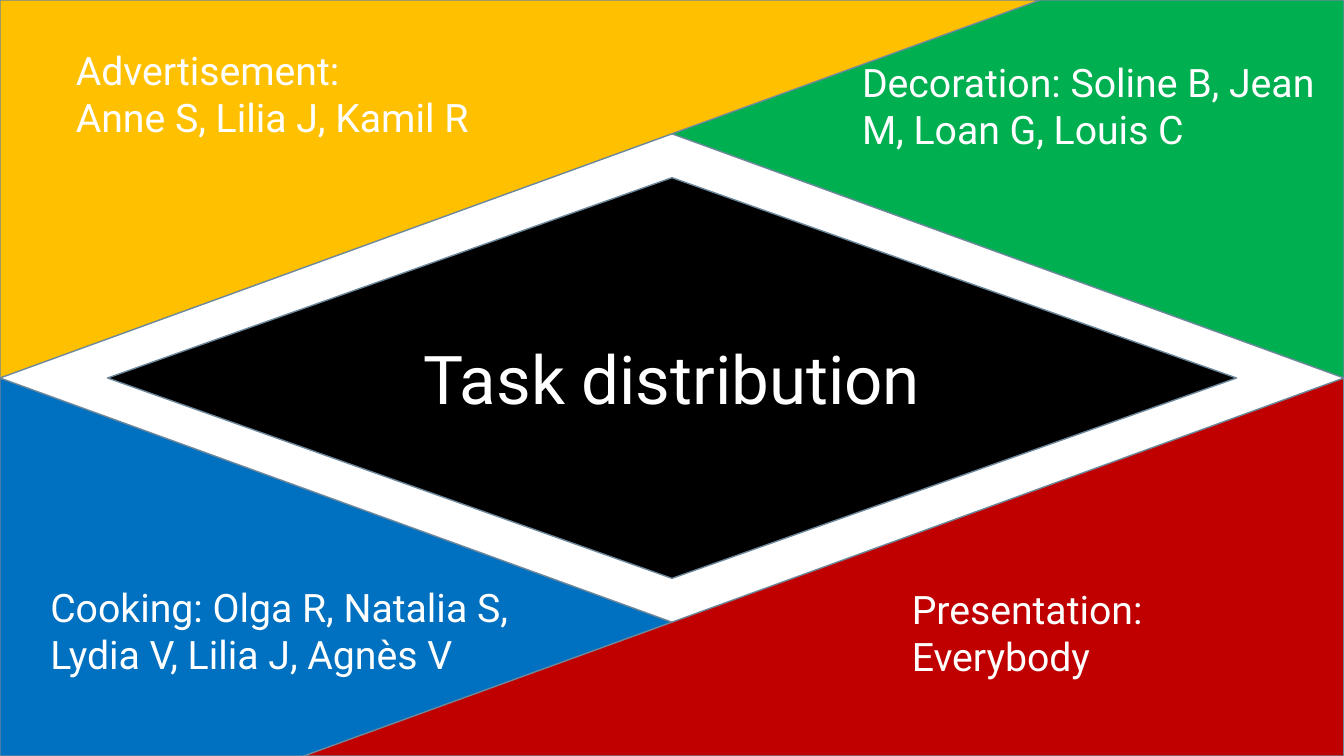
"""Build the task distribution slide: four coloured corners around a black diamond."""
from dataclasses import dataclass

from pptx import Presentation
from pptx.dml.color import RGBColor
from pptx.enum.shapes import MSO_SHAPE
from pptx.enum.text import MSO_ANCHOR, MSO_AUTO_SIZE, PP_ALIGN
from pptx.util import Inches, Pt

CORNER = MSO_SHAPE.RIGHT_TRIANGLE
DIAMOND = MSO_SHAPE.FLOWCHART_DECISION
MIDDLE = MSO_ANCHOR.MIDDLE
TOP = MSO_ANCHOR.TOP
GROW = MSO_AUTO_SIZE.SHAPE_TO_FIT_TEXT
CENTER = PP_ALIGN.CENTER
LEFT = PP_ALIGN.LEFT


@dataclass(frozen=True)
class Theme:
    font: str = "Roboto"
    title_size: int = 48
    task_size: int = 28
    line_width: int = 1
    text: str = "FFFFFF"
    outline: str = "6D879B"
    center: str = "000000"
    cooking: str = "0070C0"
    decoration: str = "00B050"
    presentation: str = "C00000"
    advertisement: str = "FFC000"


class TaskSlide:
    def __init__(self, deck, theme):
        self.theme = theme
        self.slide = deck.slides.add_slide(deck.slide_layouts[6])
        self.column = deck.slide_width / 100
        self.row = deck.slide_height / 100

    def place(self, left, top, width, height):
        return (round(left * self.column), round(top * self.row),
                round(width * self.column), round(height * self.row))

    def panel(self, kind, area, color):
        panel = self.slide.shapes.add_shape(kind, *self.place(*area))
        panel.shadow.inherit = False
        panel.fill.solid()
        panel.fill.fore_color.rgb = RGBColor.from_string(color)
        panel.line.color.rgb = RGBColor.from_string(self.theme.outline)
        panel.line.width = Pt(self.theme.line_width)
        return panel

    def corner(self, area, color, rotation, mirrored):
        corner = self.panel(CORNER, area, color)
        corner.rotation = rotation
        if mirrored:
            corner.element.spPr.xfrm.set("flipH", "1")

    def add_lines(self, frame, lines, size, align, frame_format):
        for name, value in {"word_wrap": True, **frame_format}.items():
            setattr(frame, name, value)
        font_format = {"name": self.theme.font, "size": Pt(size)}
        for index, line in enumerate(lines):
            paragraph = frame.paragraphs[0] if index == 0 else frame.add_paragraph()
            paragraph.alignment = align
            run = paragraph.add_run()
            run.text = line
            for name, value in font_format.items():
                setattr(run.font, name, value)
            run.font.color.rgb = RGBColor.from_string(self.theme.text)

    def title(self, area, wording):
        center = self.panel(DIAMOND, area, self.theme.center)
        self.add_lines(center.text_frame, [wording], self.theme.title_size, CENTER,
                       {"vertical_anchor": MIDDLE})

    def task(self, area, lines):
        label = self.slide.shapes.add_textbox(*self.place(*area))
        self.add_lines(label.text_frame, lines, self.theme.task_size, LEFT,
                       {"vertical_anchor": TOP, "auto_size": GROW})


def main():
    deck = Presentation()
    deck.slide_width, deck.slide_height = Inches(13.33), Inches(7.5)
    theme = Theme()
    page = TaskSlide(deck, theme)

    corner_width, half = 77.4, 50
    inset = 100 - corner_width
    corners = [
        (0, half, theme.cooking, 0, False),
        (inset, 0, theme.decoration, 180, False),
        (inset, half, theme.presentation, 0, True),
        (0, 0, theme.advertisement, 180, True),
    ]
    for left, top, color, rotation, mirrored in corners:
        page.corner((left, top, corner_width, half), color, rotation, mirrored)

    page.title((8, 23.5, 84, 53), "Task distribution")

    tasks = [
        (4.9, 5.5, 18, ["Advertisement:", "Anne S, Lilia J, Kamil R"]),
        (63.4, 7.1, 18, ["Decoration: Soline B, Jean M, Loan G, Louis C"]),
        (3, 76.5, 18, ["Cooking: Olga R, Natalia S, Lydia V, Lilia J, Agnès V"]),
        (67.1, 76.8, 13.9, ["Presentation:", "Everybody"]),
    ]
    for left, top, height, lines in tasks:
        page.task((left, top, 37.2, height), lines)

    deck.save("out.pptx")


if __name__ == "__main__":
    main()
